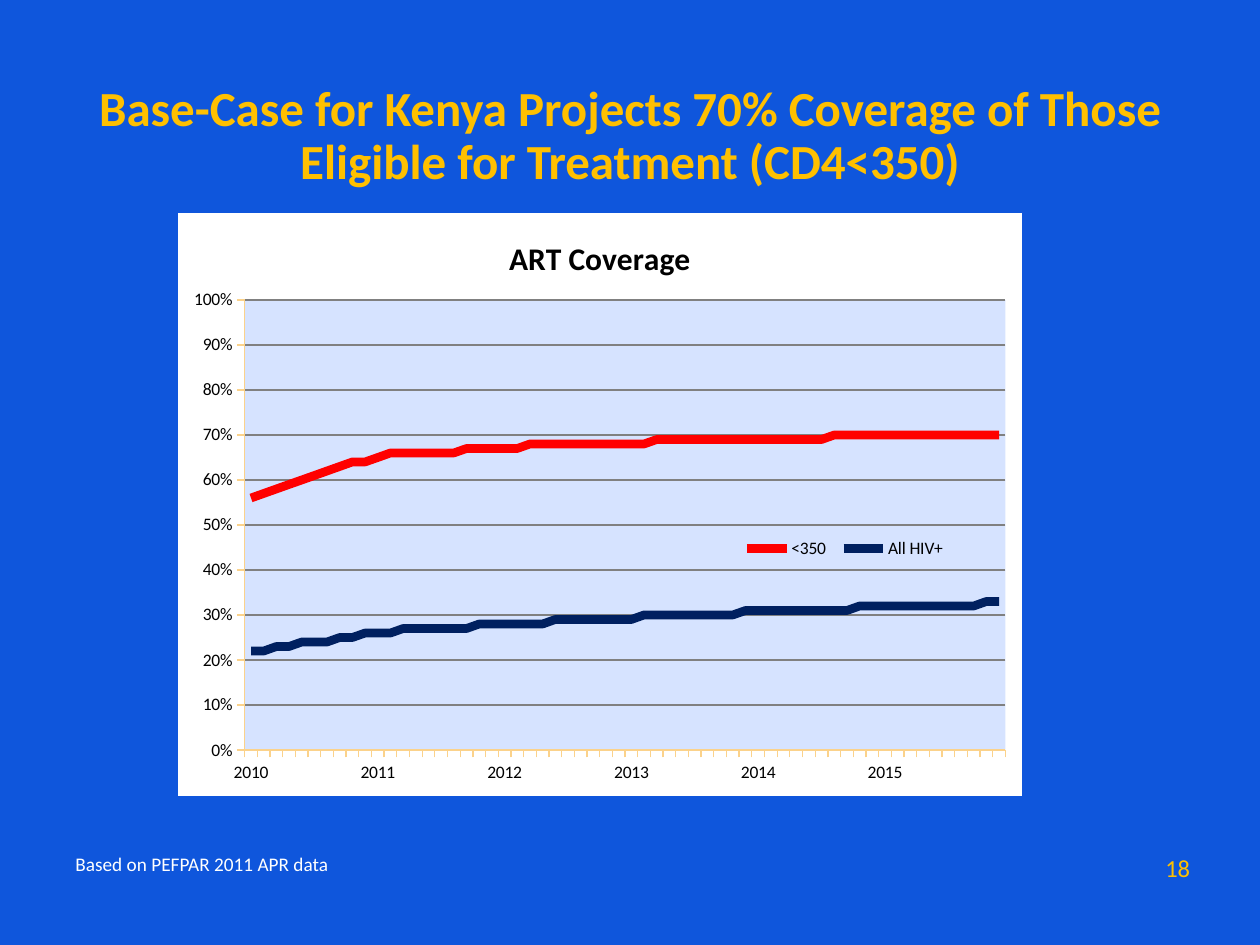
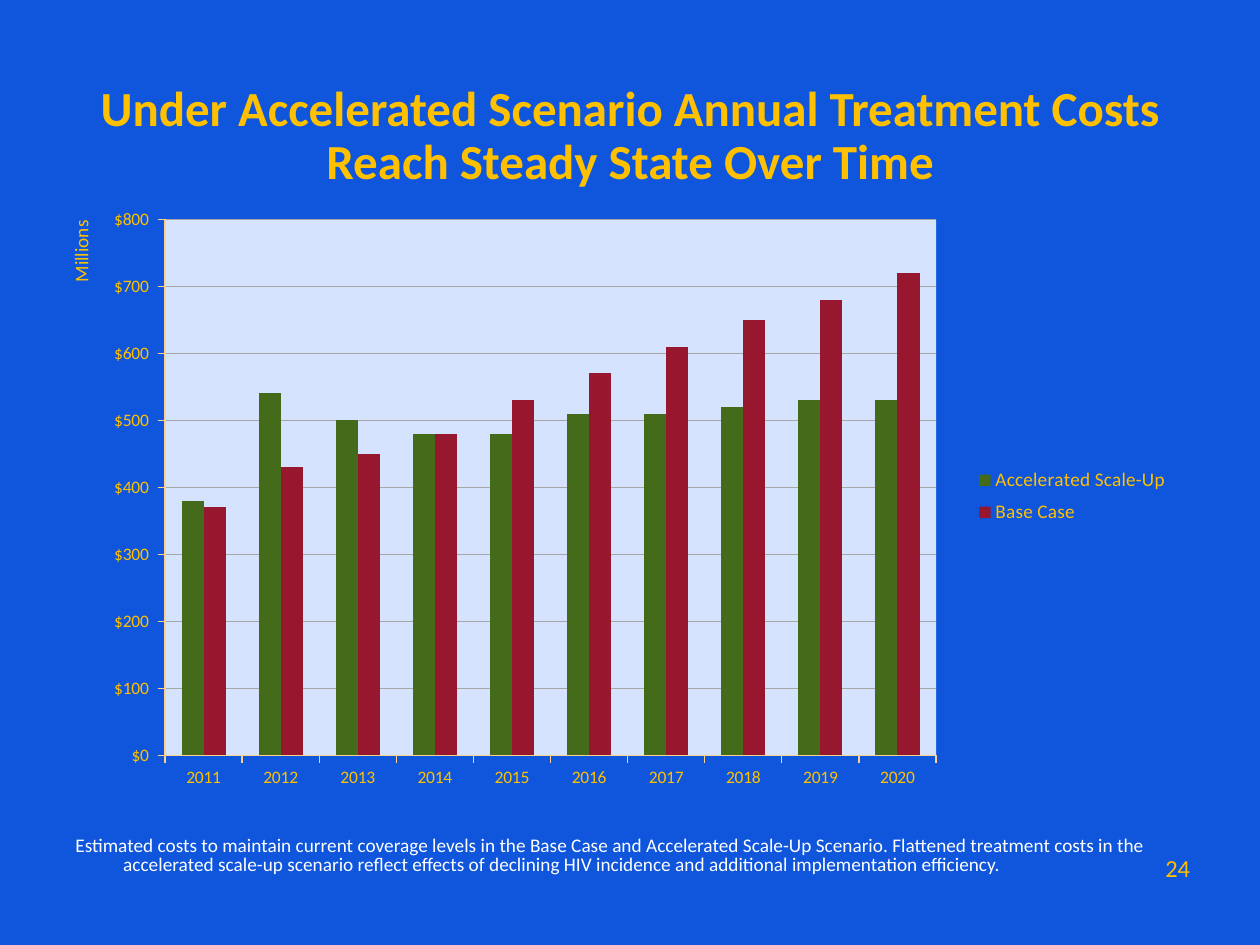
from dataclasses import dataclass

from lxml import etree
from pptx import Presentation
from pptx.chart.data import CategoryChartData
from pptx.dml.color import RGBColor
from pptx.enum.chart import XL_CHART_TYPE, XL_LEGEND_POSITION, XL_TICK_MARK
from pptx.enum.text import MSO_ANCHOR, PP_ALIGN
from pptx.oxml import parse_xml
from pptx.oxml.ns import nsdecls, qn
from pptx.util import Emu, Pt

PX = 9144  # 100 px to the inch


@dataclass(frozen=True)
class Theme:
    font: str = "Calibri"
    background: str = "0F56DC"
    accent: str = "FFC000"
    white: str = "FFFFFF"
    black: str = "000000"
    plot: str = "D6E3FF"
    axis: str = "FBD28B"
    dark_grid: str = "808080"
    light_grid: str = "A6A6A6"
    red: str = "FF0000"
    navy: str = "002060"
    green: str = "446B19"
    crimson: str = "96172E"
    title_size: int = 28
    title_spacing: int = 30
    chart_title_size: int = 18
    page_size: int = 14
    note_size: int = 11
    chart_size: int = 10


def rgb(color):
    return RGBColor.from_string(color)


def expand(steps):
    """Turn (percent, repeats) pairs into a flat list of fractions."""
    return [percent / 100 for percent, repeats in steps for _ in range(repeats)]


def area_properties(fill=None, border=None):
    def paint(color):
        if color is None:
            return "<a:noFill/>"
        return f'<a:solidFill><a:srgbClr val="{color}"/></a:solidFill>'

    return parse_xml(
        f'<c:spPr {nsdecls("c", "a")}>{paint(fill)}'
        f'<a:ln w="9525">{paint(border)}</a:ln></c:spPr>'
    )


def manual_layout(box, inner=False):
    """Place a chart part by fractions of the chart: left, top, width, height."""
    target = '<c:layoutTarget val="inner"/>' if inner else ""
    modes = '<c:xMode val="edge"/><c:yMode val="edge"/>'
    sizes = "".join(f'<c:{key} val="{value}"/>' for key, value in zip("xywh", box))
    return parse_xml(
        f'<c:layout {nsdecls("c")}><c:manualLayout>{target}{modes}{sizes}'
        "</c:manualLayout></c:layout>"
    )


class Deck:
    def __init__(self, theme):
        self.theme = theme
        self.presentation = Presentation()
        self.presentation.slide_width = Emu(1000 * PX)
        self.presentation.slide_height = Emu(750 * PX)
        self.slide = None

    def add_slide(self, title, note, page):
        theme = self.theme
        self.slide = self.presentation.slides.add_slide(
            self.presentation.slide_layouts[6])
        fill = self.slide.background.fill
        fill.solid()
        fill.fore_color.rgb = rgb(theme.background)
        self.add_text(page, (915, 672, 64, 34), theme.page_size, theme.accent)
        self.add_text(title, (50, 30, 900, 125), theme.title_size, theme.accent,
                      bold=True, align=PP_ALIGN.CENTER, anchor=MSO_ANCHOR.BOTTOM,
                      spacing=theme.title_spacing)
        self.add_text(note, (50, 633, 900, 67), theme.note_size, theme.white,
                      anchor=MSO_ANCHOR.BOTTOM, spacing=theme.note_size, hanging=38)

    def add_text(self, text, box, size, color, bold=False, align=PP_ALIGN.LEFT,
                 anchor=MSO_ANCHOR.TOP, spacing=None, hanging=0, upward=False):
        shape = self.slide.shapes.add_textbox(*(Emu(value * PX) for value in box))
        frame = shape.text_frame
        frame.word_wrap = not upward
        frame.vertical_anchor = anchor
        if upward:
            shape.element.find(".//" + qn("a:bodyPr")).set("vert", "vert270")
        paragraph = frame.paragraphs[0]
        paragraph.alignment = align
        if spacing:
            paragraph.line_spacing = Pt(spacing)
        if hanging:
            properties = paragraph._p.get_or_add_pPr()
            properties.set("marL", str(hanging * PX))
            properties.set("indent", str(-hanging * PX))
        run = paragraph.add_run()
        run.text = text
        self.style_font(run.font, size, color, bold)

    def style_font(self, font, size, color, bold=False):
        font.name = self.theme.font
        font.size = Pt(size)
        font.bold = bold
        font.color.rgb = rgb(color)

    def add_chart(self, kind, box, categories, series, text_color, plot_box):
        """Add a chart; series is a list of (name, values)."""
        data = CategoryChartData()
        data.categories = categories
        for name, values in series:
            data.add_series(name, values)
        frame = self.slide.shapes.add_chart(
            kind, *(Emu(value * PX) for value in box), data)
        chart = frame.chart
        chart.has_title = False
        self.style_font(chart.font, self.theme.chart_size, text_color)
        chart.plots[0].vary_by_categories = False
        plot_area = chart.element.find(".//" + qn("c:plotArea"))
        for layout in plot_area.findall(qn("c:layout")):
            plot_area.remove(layout)
        plot_area.insert(0, manual_layout(plot_box, inner=True))
        plot_area.append(area_properties(self.theme.plot))
        return chart

    def set_chart_area(self, chart, fill=None, border=None):
        chart.element.find(qn("c:chart")).addnext(area_properties(fill, border))

    def set_chart_title(self, chart, text, color):
        chart.has_title = True
        run = chart.chart_title.text_frame.paragraphs[0].add_run()
        run.text = text
        self.style_font(run.font, self.theme.chart_title_size, color, bold=True)

    def set_axes(self, chart, maximum, step, number_format, grid_color, grid_width):
        for axis in (chart.category_axis, chart.value_axis):
            axis.major_tick_mark = XL_TICK_MARK.OUTSIDE
            axis.minor_tick_mark = XL_TICK_MARK.NONE
            axis.format.line.color.rgb = rgb(self.theme.axis)
            axis.format.line.width = Pt(0.75)
        axis = chart.value_axis
        axis.minimum_scale, axis.maximum_scale, axis.major_unit = 0, maximum, step
        axis.tick_labels.number_format = number_format
        axis.tick_labels.number_format_is_linked = False
        axis.has_major_gridlines = True
        axis.major_gridlines.format.line.color.rgb = rgb(grid_color)
        axis.major_gridlines.format.line.width = Pt(grid_width)

    def set_legend(self, chart, box, size, color, overlay):
        chart.has_legend = True
        legend = chart.legend
        legend.position = XL_LEGEND_POSITION.RIGHT
        legend.include_in_layout = overlay
        self.style_font(legend.font, size, color)
        legend._element.find(qn("c:overlay")).addprevious(manual_layout(box))


def add_coverage_slide(deck):
    theme = deck.theme
    deck.add_slide(
        "Base-Case for Kenya Projects 70% Coverage of Those Eligible for "
        "Treatment (CD4<350)",
        "Based on PEFPAR 2011 APR data", "18")
    eligible = expand([(percent, 1) for percent in range(56, 64)] + [
        (64, 2), (65, 1), (66, 6), (67, 5), (68, 10), (69, 14), (70, 14)])
    all_positive = expand([
        (22, 2), (23, 2), (24, 3), (25, 2), (26, 3), (27, 6), (28, 6), (29, 7),
        (30, 8), (31, 9), (32, 10), (33, 2)])
    points_per_year = 10
    categories = [
        "" if point % points_per_year else str(2010 + point // points_per_year)
        for point in range(len(eligible))]
    chart = deck.add_chart(
        XL_CHART_TYPE.LINE, (140, 168, 672, 465), categories,
        [("<350", eligible), ("All HIV+", all_positive)],
        theme.black, (0.08, 0.15, 0.9, 0.77))
    deck.set_chart_area(chart, theme.white, theme.background)
    deck.set_chart_title(chart, "ART Coverage", theme.black)
    deck.set_axes(chart, 1, 0.1, "0%", theme.dark_grid, 0.75)
    deck.set_legend(chart, (0.66, 0.55, 0.26, 0.05), theme.chart_size,
                    theme.black, overlay=True)
    for series, color in zip(chart.plots[0].series, (theme.red, theme.navy)):
        series.smooth = False
        series.format.line.color.rgb = rgb(color)
        series.format.line.width = Pt(5)


def add_cost_slide(deck):
    theme = deck.theme
    deck.add_slide(
        "Under Accelerated Scenario Annual Treatment Costs Reach Steady State "
        "Over Time",
        "Estimated costs to maintain current coverage levels in the Base Case and "
        "Accelerated Scale-Up Scenario. Flattened treatment costs in the "
        "accelerated scale-up scenario reflect effects of declining HIV incidence "
        "and additional implementation efficiency.", "24")
    chart = deck.add_chart(
        XL_CHART_TYPE.COLUMN_CLUSTERED, (50, 155, 900, 478),
        [str(year) for year in range(2011, 2021)],
        [("Accelerated Scale-Up",
          (380, 540, 500, 480, 480, 510, 510, 520, 530, 530)),
         ("Base Case",
          (370, 430, 450, 480, 530, 570, 610, 650, 680, 720))],
        theme.accent, (0.09, 0.04, 0.68, 0.89))
    deck.set_chart_area(chart)
    deck.set_axes(chart, 800, 100, '"$"#,##0_);[Red]\\("$"#,##0\\)',
                  theme.light_grid, 0.5)
    deck.set_legend(chart, (0.79, 0.44, 0.2, 0.12), theme.note_size,
                    theme.accent, overlay=False)
    plot = chart.plots[0]
    plot.gap_width, plot.overlap = 150, 0
    for series, color in zip(plot.series, (theme.green, theme.crimson)):
        series.format.fill.solid()
        series.format.fill.fore_color.rgb = rgb(color)
    deck.add_text("Millions", (50, 172, 39, 62), theme.note_size, theme.accent,
                  upward=True)


def main():
    deck = Deck(Theme())
    add_coverage_slide(deck)
    add_cost_slide(deck)
    deck.presentation.save("out.pptx")


if __name__ == "__main__":
    main()
